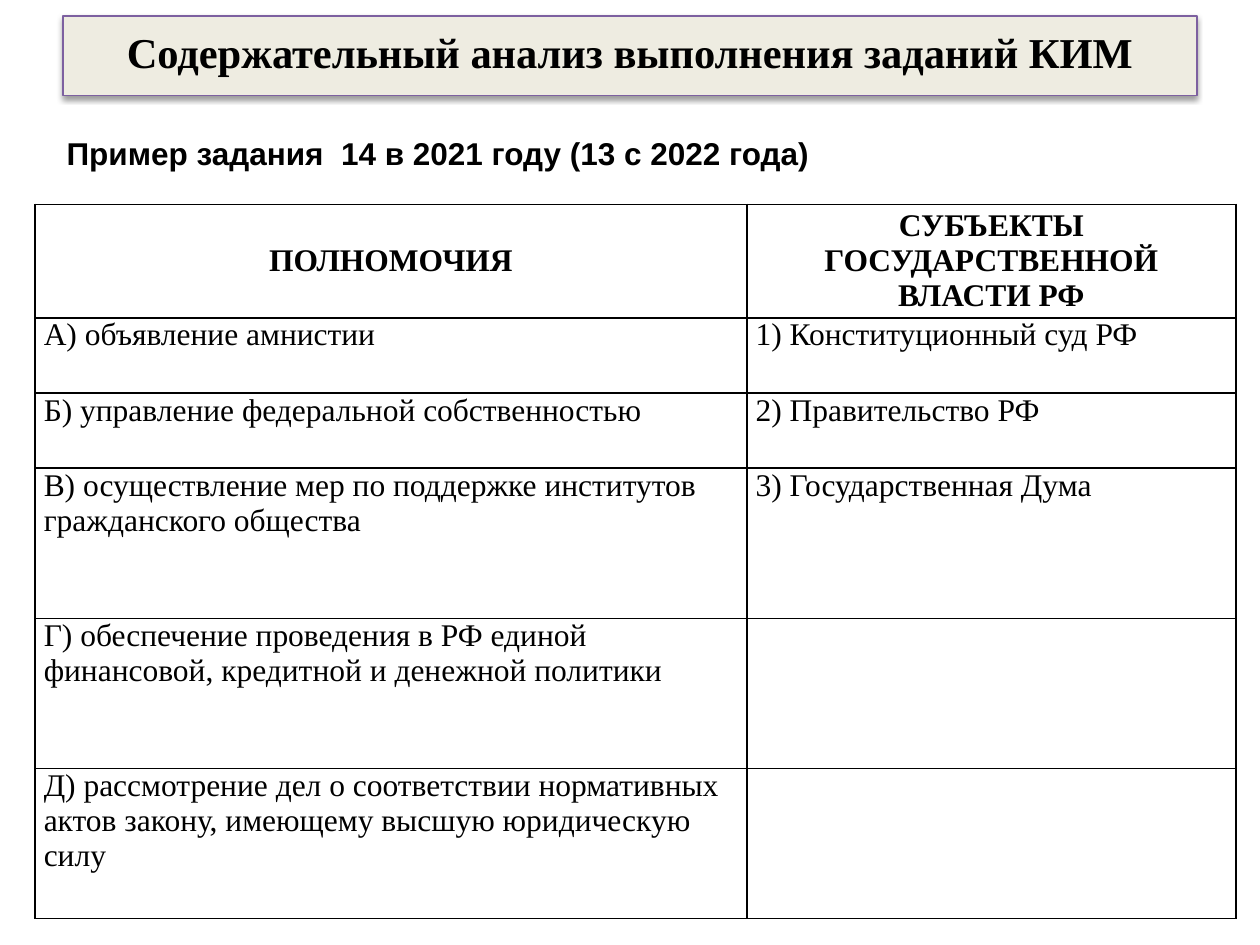
import pptx
import pptx.dml.color
import pptx.enum.shapes
import pptx.enum.text
import pptx.oxml
import pptx.util
from lxml import etree

Pt = pptx.util.Pt
ALIGN = pptx.enum.text.PP_ALIGN
ANCHOR = pptx.enum.text.MSO_ANCHOR
COLORS = {"text": "000000", "banner": "EEECE1", "banner_line": "7D60A0",
          "border": "000000", "shadow": "000000"}
DRAWING_NS = "http://schemas.openxmlformats.org/drawingml/2006/main"

COLUMN_WIDTHS = [406.8, 279.36]
ROW_HEIGHTS = [64.8, 43, 43, 85.8, 85.8, 85.8]
ROWS = [
    ("ПОЛНОМОЧИЯ", "СУБЪЕКТЫ ГОСУДАРСТВЕННОЙ ВЛАСТИ РФ"),
    ("А) объявление амнистии", "1) Конституционный суд РФ"),
    ("Б) управление федеральной собственностью", "2) Правительство РФ"),
    ("В) осуществление мер по поддержке институтов гражданского общества",
     "3) Государственная Дума"),
    ("Г) обеспечение проведения в РФ единой финансовой, кредитной и денежной политики", ""),
    ("Д) рассмотрение дел о соответствии нормативных актов закону, "
     "имеющему высшую юридическую силу", ""),
]


def rgb(name):
    return pptx.dml.color.RGBColor.from_string(COLORS[name])


def write_text(frame, text, font, size, bold, align):
    frame.text = text
    paragraph = frame.paragraphs[0]
    paragraph.alignment = align
    for span in paragraph.runs:
        span.font.name = font
        span.font.size = Pt(size)
        span.font.bold = bold
        span.font.color.rgb = rgb("text")


def add_shadow(shape):
    effects = pptx.oxml.parse_xml(
        f'<a:effectLst xmlns:a="{DRAWING_NS}">'
        '<a:outerShdw blurRad="39370" dist="20320" dir="5400000" rotWithShape="0">'
        f'<a:srgbClr val="{COLORS["shadow"]}"><a:alpha val="38000"/></a:srgbClr>'
        '</a:outerShdw></a:effectLst>')
    properties = shape.element.spPr
    for old in properties.findall(f"{{{DRAWING_NS}}}effectLst"):
        properties.remove(old)
    properties.append(effects)


def add_banner(page, left, top, width, height):
    banner = page.shapes.add_shape(pptx.enum.shapes.MSO_SHAPE.RECTANGLE,
                                   Pt(left), Pt(top), Pt(width), Pt(height))
    banner.fill.solid()
    banner.fill.fore_color.rgb = rgb("banner")
    banner.line.color.rgb = rgb("banner_line")
    banner.line.width = Pt(0.75)
    add_shadow(banner)
    frame = banner.text_frame
    frame.word_wrap = True
    frame.vertical_anchor = ANCHOR.MIDDLE
    frame.margin_bottom = Pt(9)
    write_text(frame, "Содержательный анализ выполнения заданий КИМ",
               "Times New Roman", 24.3, True, ALIGN.CENTER)


def add_subtitle(page, left, top, width, height):
    box = page.shapes.add_textbox(Pt(left), Pt(top), Pt(width), Pt(height))
    frame = box.text_frame
    frame.word_wrap = True
    frame.vertical_anchor = ANCHOR.MIDDLE
    write_text(frame, "Пример задания  14 в 2021 году (13 с 2022 года)",
               "Arial", 18, True, ALIGN.JUSTIFY)


def add_borders(cell):
    properties = cell._tc.get_or_add_tcPr()
    for index, side in enumerate(("lnL", "lnR", "lnT", "lnB")):
        border = pptx.oxml.parse_xml(
            f'<a:{side} xmlns:a="{DRAWING_NS}" w="{Pt(1)}"><a:solidFill>'
            f'<a:srgbClr val="{COLORS["border"]}"/></a:solidFill></a:{side}>')
        properties.insert(index, border)


def add_powers_table(page, left, top):
    frame = page.shapes.add_table(len(ROWS), len(COLUMN_WIDTHS), Pt(left), Pt(top),
                                  Pt(sum(COLUMN_WIDTHS)), Pt(sum(ROW_HEIGHTS)))
    table = frame.table
    for column, width in zip(table.columns, COLUMN_WIDTHS):
        column.width = Pt(width)
    for row_index, texts in enumerate(ROWS):
        row = table.rows[row_index]
        row.height = Pt(ROW_HEIGHTS[row_index])
        header = row_index == 0
        for cell, text in zip(row.cells, texts):
            cell.fill.background()
            cell.margin_left = cell.margin_right = Pt(5)
            cell.margin_top = cell.margin_bottom = 0
            cell.vertical_anchor = ANCHOR.MIDDLE if header else ANCHOR.TOP
            write_text(cell.text_frame, text, "Times New Roman", 18, header,
                       ALIGN.CENTER if header else ALIGN.LEFT)
            add_borders(cell)


def main():
    deck = pptx.Presentation()
    deck.slide_width, deck.slide_height = Pt(720), Pt(540)
    page = deck.slides.add_slide(deck.slide_layouts[6])
    add_banner(page, 36, 9.2, 648, 45.5)
    add_subtitle(page, 31, 72.8, 689, 29)
    add_powers_table(page, 20, 116.8)
    deck.save("out.pptx")


if __name__ == "__main__":
    main()
